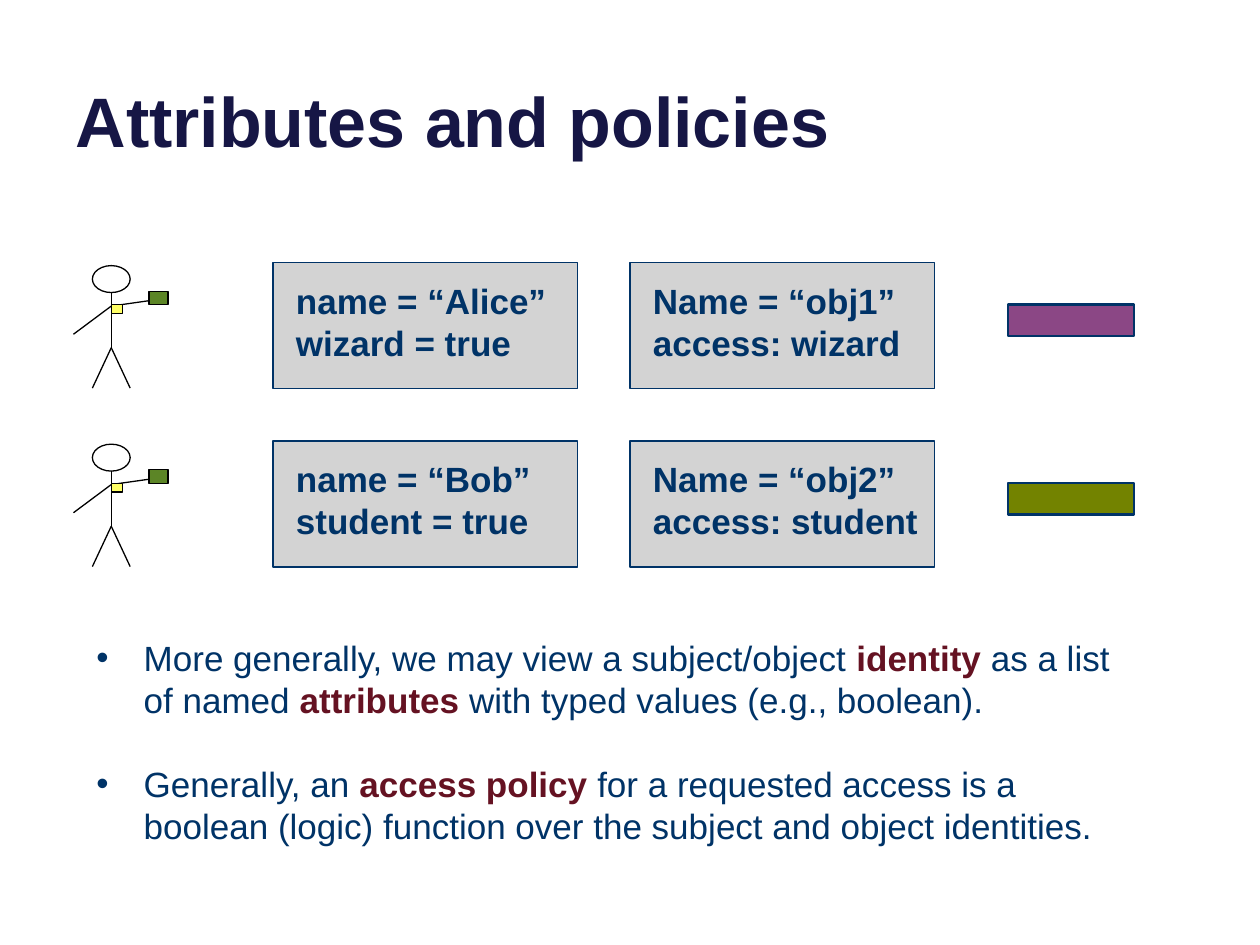
from dataclasses import dataclass

from lxml.etree import SubElement
from pptx import Presentation
from pptx.dml.color import RGBColor
from pptx.enum.shapes import MSO_CONNECTOR as Connector, MSO_SHAPE as Shape
from pptx.enum.text import MSO_ANCHOR as Anchor, MSO_AUTO_SIZE as AutoSize, PP_ALIGN as Align
from pptx.oxml.ns import qn
from pptx.util import Pt


@dataclass(frozen=True)
class Theme:
    """Colours, font, type sizes and line widths of the slide."""
    font: str = "Arial"
    title_size: float = 40
    body_size: float = 20
    thin: float = 0.75
    thick: float = 1.5
    title: str = "161645"
    text: str = "003367"
    emphasis: str = "651222"
    card: str = "D3D3D3"
    figure: str = "000000"
    held_object: str = "5C8526"
    badge: str = "FFFF66"


THEME = Theme()
ROWS = [
    (["name = “Alice”", "wizard = true"], ["Name = “obj1”", "access: wizard"], "8B4785"),
    (["name = “Bob”", "student = true"], ["Name = “obj2”", "access: student"], "738300"),
]
BULLETS = [
    [("More generally, we may view a subject/object ", False), ("identity ", True),
     ("as a list of named ", False), ("attributes ", True),
     ("with typed values (e.g., boolean).", False)],
    [("Generally, an ", False), ("access policy ", True),
     ("for a requested access is a boolean (logic) function over the subject "
      "and object identities.", False)],
]


def add_run(paragraph, text, size, color, bold):
    """Append one formatted run."""
    run = paragraph.add_run()
    run.text = text
    run.font.name = THEME.font
    run.font.size = Pt(size)
    run.font.bold = bold
    run.font.color.rgb = RGBColor.from_string(color)


def add_outlined(shapes, preset, box, fill, line, width):
    """Draw a preset shape, hollow when fill is None."""
    outlined = shapes.add_shape(preset, *map(Pt, box))
    outlined.shadow.inherit = False
    if fill:
        outlined.fill.solid()
        outlined.fill.fore_color.rgb = RGBColor.from_string(fill)
    else:
        outlined.fill.background()
    outlined.line.color.rgb = RGBColor.from_string(line)
    outlined.line.width = Pt(width)


def add_text_frame(slide, box):
    """Add a wrapping text box and return its frame."""
    frame = slide.shapes.add_textbox(*map(Pt, box)).text_frame
    frame.word_wrap = True
    return frame


def add_title(slide, box, text):
    """Place and format the title placeholder."""
    title = slide.shapes.title
    title.left, title.top, title.width, title.height = map(Pt, box)
    frame = title.text_frame
    frame.auto_size = AutoSize.NONE
    frame.vertical_anchor = Anchor.BOTTOM
    heading = frame.paragraphs[0]
    heading.alignment = Align.LEFT
    add_run(heading, text, THEME.title_size, THEME.title, True)


def add_subject(slide, box):
    """Draw a stick figure with a badge and a held object."""
    left, top, width, height = box
    parts = slide.shapes.add_group_shape().shapes

    def point(x, y):
        return left + x * width, top + y * height

    neck, shoulder, hip = (0.4, 0.22), (0.4, 0.33), (0.4, 0.67)
    limbs = [(neck, hip), ((0.2, 1), hip), ((0.6, 1), hip),
             ((0.95, 0.27), shoulder), ((0, 0.56), shoulder)]
    for start, end in limbs:
        limb = parts.add_connector(
            Connector.STRAIGHT, *map(Pt, point(*start) + point(*end)))
        limb.line.color.rgb = RGBColor.from_string(THEME.figure)
        limb.line.width = Pt(THEME.thin)
        SubElement(limb._element.spPr, qn("a:effectLst"))

    solids = [(Shape.OVAL, (0, 0.2), (0.4, 0.22), None),
              (Shape.RECTANGLE, (0.8, 0.21), (0.2, 0.11), THEME.held_object),
              (Shape.RECTANGLE, (0.4, 0.32), (0.12, 0.07), THEME.badge)]
    solids[0] = (Shape.OVAL, (0.2, 0), (0.4, 0.22), None)
    for preset, corner, (w, h), fill in solids:
        add_outlined(parts, preset, (*point(*corner), w * width, h * height),
                     fill, THEME.figure, THEME.thin)


def add_card(slide, box, lines):
    """Draw a grey card with its attribute lines."""
    left, top, width, height = box
    add_outlined(slide.shapes, Shape.RECTANGLE, box, THEME.card, THEME.text, THEME.thin)
    frame = add_text_frame(slide, (left + 6, top + 6, width - 6, 55.5))
    for index, line in enumerate(lines):
        attribute = frame.add_paragraph() if index else frame.paragraphs[0]
        add_run(attribute, line, THEME.body_size, THEME.text, True)


def add_row(slide, box, identity, policy, object_color):
    """Lay out a subject, its identity, an object policy and the object."""
    left, top, width, height = box
    add_subject(slide, (left, top + 1.8, 54, 70))
    for offset, lines in ((114, identity), (318, policy)):
        add_card(slide, (left + offset, top, 174, height), lines)
    add_outlined(slide.shapes, Shape.RECTANGLE,
                 (left + width - 72, top + height / 3, 72, 18),
                 object_color, THEME.text, THEME.thick)


def add_bullets(slide, box, bullets):
    """Write the bulleted statements with emphasised terms."""
    frame = add_text_frame(slide, box)
    for index, phrases in enumerate(bullets):
        bullet = frame.add_paragraph() if index else frame.paragraphs[0]
        bullet.space_before = Pt(24 if index else 0)
        properties = bullet._p.get_or_add_pPr()
        properties.set("marL", str(Pt(27)))
        properties.set("indent", str(-Pt(27)))
        SubElement(properties, qn("a:buFont"), typeface=THEME.font)
        SubElement(properties, qn("a:buChar"), char="•")
        for text, emphasised in phrases:
            color = THEME.emphasis if emphasised else THEME.text
            add_run(bullet, text, THEME.body_size, color, emphasised)


def main():
    """Build and save the slide."""
    deck = Presentation()
    deck.slide_width, deck.slide_height = Pt(720), Pt(540)
    slide = deck.slides.add_slide(deck.slide_layouts.get_by_name("Title Only"))
    add_title(slide, (36, -26.5, 648, 122.5), "Attributes and policies")
    for index, (identity, policy, object_color) in enumerate(ROWS):
        add_row(slide, (42, 150 + 102 * index, 606, 72), identity, policy, object_color)
    add_bullets(slide, (48, 360, 600, 177), BULLETS)
    deck.save("out.pptx")


if __name__ == "__main__":
    main()
